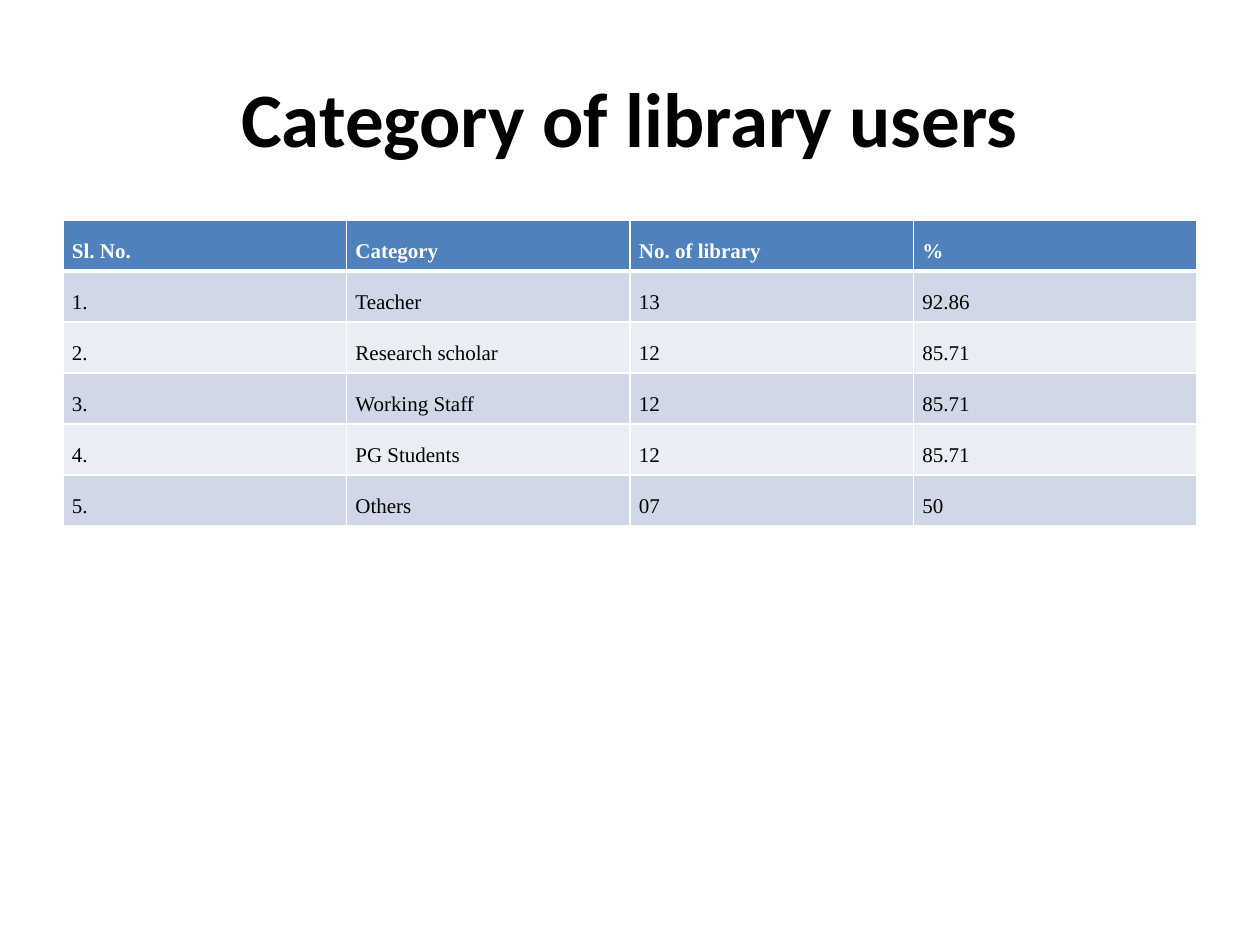
from pptx import Presentation
from pptx.dml.color import RGBColor
from pptx.enum.text import MSO_ANCHOR, PP_ALIGN
from pptx.oxml import parse_xml
from pptx.oxml.ns import nsdecls
from pptx.util import Emu, Pt

PX_PER_INCH = 126
COLORS = {
    "text": "000000",
    "header_text": "FFFFFF",
    "border": "FFFFFF",
    "header": "4F81BD",
    "odd_row": "D0D8E8",
    "even_row": "E9EDF4",
}
HEADINGS = ("Sl. No.", "Category", "No. of library", "%")
USERS = (
    ("1.", "Teacher", "13", "92.86"),
    ("2.", "Research scholar", "12", "85.71"),
    ("3.", "Working Staff", "12", "85.71"),
    ("4.", "PG Students", "12", "85.71"),
    ("5.", "Others", "07", "50"),
)
MARGIN, CONTENT_WIDTH = 63, 1134
ROW_HEIGHT = 51


def px(length):
    return Emu(round(length * 914400 / PX_PER_INCH))


def format_runs(paragraph, font_name, size, color, bold):
    for run in paragraph.runs:
        run.font.name = font_name
        run.font.size = Pt(size)
        run.font.bold = bold
        run.font.color.rgb = RGBColor.from_string(COLORS[color])


def add_title(slide, wording):
    title = slide.shapes.title
    title.left, title.top = px(MARGIN), px(38)
    title.width, title.height = px(CONTENT_WIDTH), px(157)
    title.text_frame.text = wording
    title.text_frame.vertical_anchor = MSO_ANCHOR.MIDDLE
    heading = title.text_frame.paragraphs[0]
    heading.alignment = PP_ALIGN.CENTER
    format_runs(heading, "Calibri", 44, "text", True)


def set_borders(cell, bottom_width, top_width):
    """Draw the cell's four sides; these must come before its fill in the XML."""
    properties = cell._tc.get_or_add_tcPr()
    for side, width in (("L", 1), ("R", 1), ("T", top_width), ("B", bottom_width)):
        properties.append(parse_xml(
            f'<a:ln{side} {nsdecls("a")} w="{Pt(width)}"><a:solidFill>'
            f'<a:srgbClr val="{COLORS["border"]}"/></a:solidFill></a:ln{side}>'
        ))


def fill_cell(cell, wording, row):
    is_header = row == 0
    set_borders(cell, 3 if is_header else 1, 3 if row == 1 else 1)
    cell.fill.solid()
    band = "header" if is_header else ("even_row", "odd_row")[row % 2]
    cell.fill.fore_color.rgb = RGBColor.from_string(COLORS[band])
    cell.margin_left = cell.margin_right = px(9)
    cell.margin_top = cell.margin_bottom = 0
    cell.vertical_anchor = MSO_ANCHOR.MIDDLE
    cell.text_frame.text = wording
    entry = cell.text_frame.paragraphs[0]
    entry.alignment = PP_ALIGN.JUSTIFY
    entry.line_spacing = 1.5
    entry.space_before = entry.space_after = Pt(6)
    color = "header_text" if is_header else "text"
    format_runs(entry, "Times New Roman", 12, color, is_header)


def add_user_table(slide, records):
    users = slide.shapes.add_table(
        len(records), len(records[0]), px(MARGIN), px(220),
        px(CONTENT_WIDTH), px(ROW_HEIGHT * len(records)),
    ).table
    for row, record in enumerate(records):
        users.rows[row].height = px(ROW_HEIGHT)
        for column, wording in enumerate(record):
            fill_cell(users.cell(row, column), wording, row)


def main():
    presentation = Presentation()
    presentation.slide_width, presentation.slide_height = px(1260), px(945)
    slide = presentation.slides.add_slide(presentation.slide_layouts[5])
    add_title(slide, "Category of library users")
    add_user_table(slide, (HEADINGS, *USERS))
    presentation.save("out.pptx")


if __name__ == "__main__":
    main()
